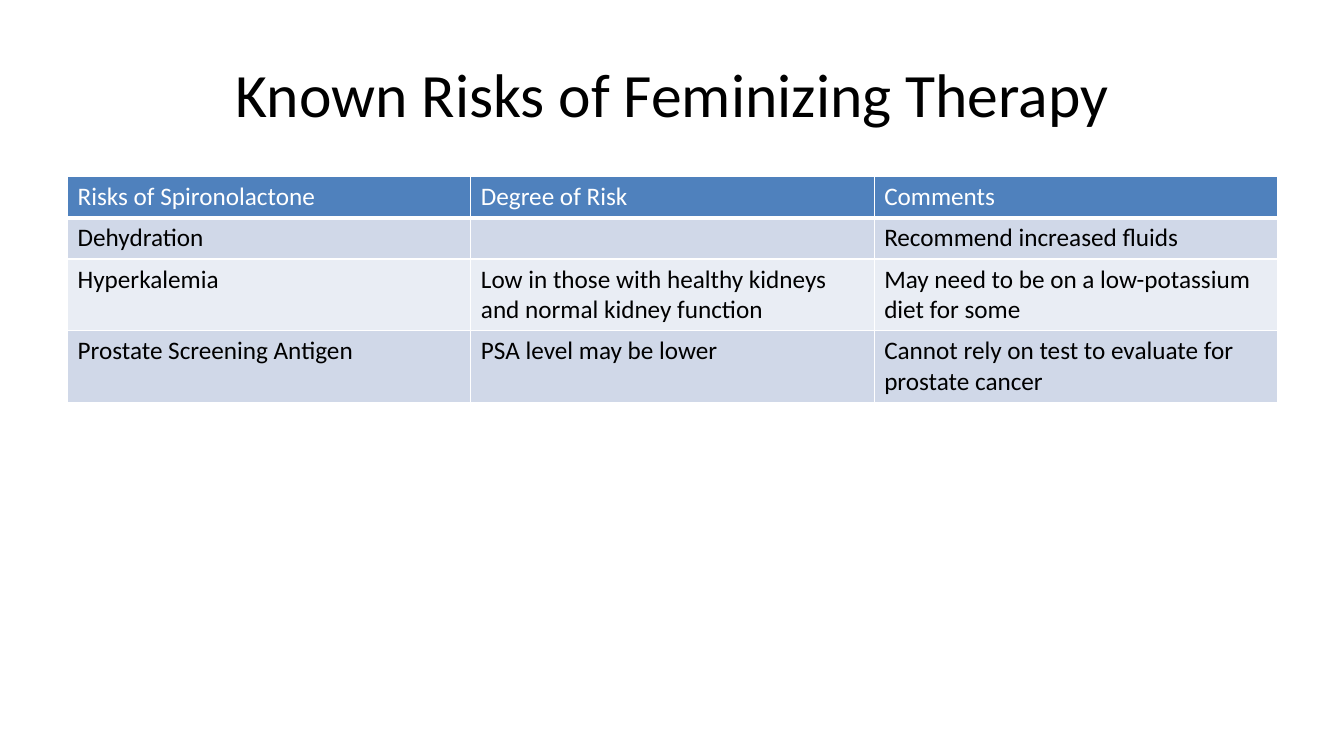
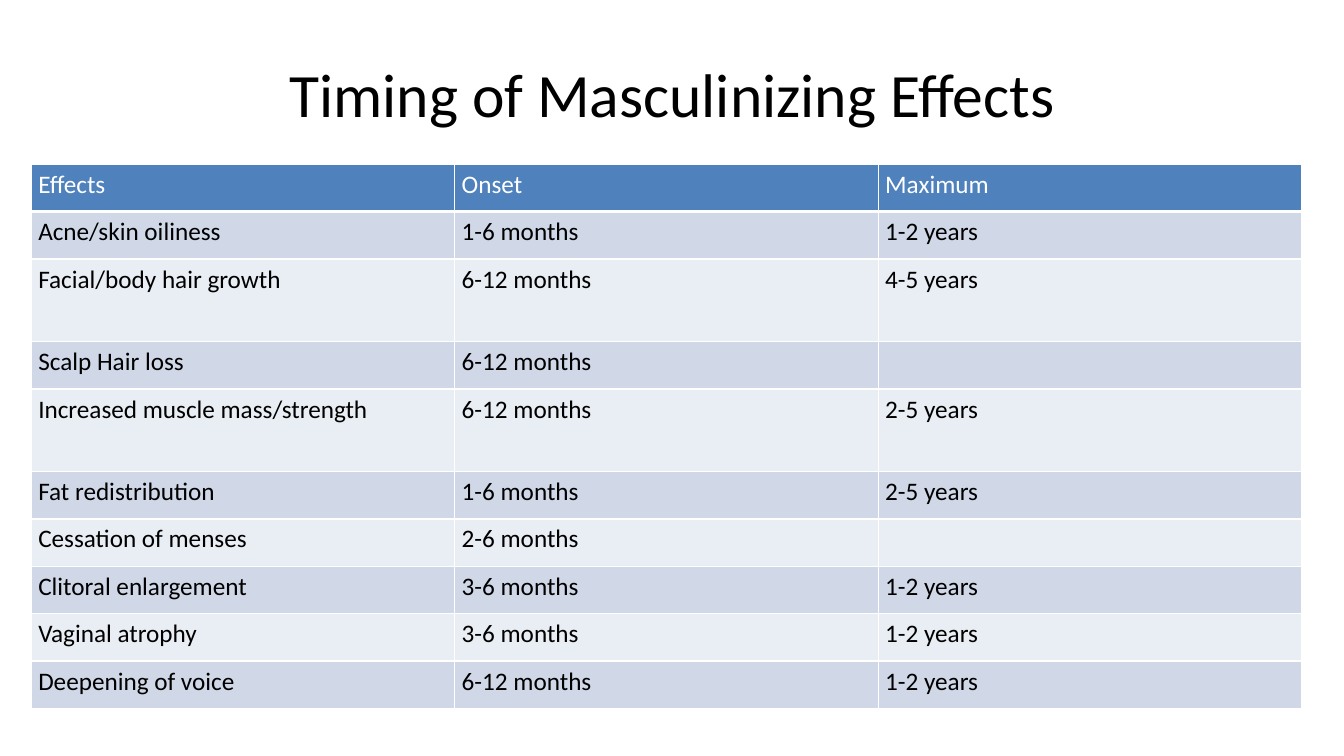
from lxml import etree
from pptx import Presentation
from pptx import util as u
from pptx.dml.color import RGBColor
from pptx.enum import text
from pptx.oxml.ns import qn

PX = 9144  # EMU, 100 px to the inch
SLIDE_SIZE = (1333, 750)
TITLE_BOX = (67, 30, 1200, 125)
FONT = "Calibri"
BLACK, WHITE = "000000", "FFFFFF"
HEADER_FILL = "4F81BD"
BAND_FILLS = ("D0D8E8", "E9EDF4")
SHORT, TALL = 47, 82

SLIDES = [
    {
        "title": "Known Risks of Feminizing Therapy",
        "left": 67, "top": 175, "column_width": 400, "side_margin": 10,
        "row_heights": [41, 41, 70, 70],
        "rows": [
            ("Risks of Spironolactone", "Degree of Risk", "Comments"),
            ("Dehydration", "", "Recommend increased fluids"),
            ("Hyperkalemia",
             "Low in those with healthy kidneys and normal kidney function",
             "May need to be on a low-potassium diet for some"),
            ("Prostate Screening Antigen", "PSA level may be lower",
             "Cannot rely on test to evaluate for prostate cancer"),
        ],
    },
    {
        "title": "Timing of Masculinizing Effects",
        "left": 31, "top": 163, "column_width": 420, "side_margin": 7,
        "row_heights": [SHORT, SHORT, TALL, SHORT, TALL] + [SHORT] * 5,
        "rows": [
            ("Effects", "Onset", "Maximum"),
            ("Acne/skin oiliness", "1-6 months", "1-2 years"),
            ("Facial/body hair growth", "6-12 months", "4-5 years"),
            ("Scalp Hair loss", "6-12 months", ""),
            ("Increased muscle mass/strength", "6-12 months", "2-5 years"),
            ("Fat redistribution", "1-6 months", "2-5 years"),
            ("Cessation of menses", "2-6 months", ""),
            ("Clitoral enlargement", "3-6 months", "1-2 years"),
            ("Vaginal atrophy", "3-6 months", "1-2 years"),
            ("Deepening of voice", "6-12 months", "1-2 years"),
        ],
    },
]


def px(length):
    return u.Emu(length * PX)


def color(hex_string):
    return RGBColor.from_string(hex_string)


def write_text(frame, content, size=18, fill=BLACK, align=text.PP_ALIGN.LEFT):
    paragraph = frame.paragraphs[0]
    paragraph.alignment = align
    if content:
        run = paragraph.add_run()
        run.text = content
        run.font.name = FONT
        run.font.size = u.Pt(size)
        run.font.color.rgb = color(fill)


def add_borders(cell, bottom_width):
    """Draw white cell borders; call before the fill, which must follow them."""
    properties = cell._tc.get_or_add_tcPr()
    for side, width in (("L", 1), ("R", 1), ("T", 1), ("B", bottom_width)):
        line = etree.SubElement(properties, qn(f"a:ln{side}"), w=str(u.Pt(width)))
        fill = etree.SubElement(line, qn("a:solidFill"))
        etree.SubElement(fill, qn("a:srgbClr"), val=WHITE)


def add_title(slide, content):
    title = slide.shapes.title
    title.left, title.top, title.width, title.height = map(px, TITLE_BOX)
    title.text_frame.vertical_anchor = text.MSO_ANCHOR.MIDDLE
    write_text(title.text_frame, content, size=44, align=text.PP_ALIGN.CENTER)


def add_banded_table(slide, content):
    rows, heights = content["rows"], content["row_heights"]
    column_count = len(rows[0])
    table = slide.shapes.add_table(
        len(rows), column_count, px(content["left"]), px(content["top"]),
        px(content["column_width"] * column_count), px(sum(heights))).table
    for column in table.columns:
        column.width = px(content["column_width"])
    for row_index, (values, height) in enumerate(zip(rows, heights)):
        is_header = row_index == 0
        band = HEADER_FILL if is_header else BAND_FILLS[(row_index - 1) % 2]
        table.rows[row_index].height = px(height)
        for column_index, value in enumerate(values):
            cell = table.cell(row_index, column_index)
            cell.margin_left = cell.margin_right = px(content["side_margin"])
            cell.margin_top = cell.margin_bottom = px(5)
            add_borders(cell, bottom_width=3 if is_header else 1)
            cell.fill.solid()
            cell.fill.fore_color.rgb = color(band)
            write_text(cell.text_frame, value, fill=WHITE if is_header else BLACK)


def main():
    presentation = Presentation()
    presentation.slide_width, presentation.slide_height = map(px, SLIDE_SIZE)
    title_only = presentation.slide_layouts[5]
    for content in SLIDES:
        slide = presentation.slides.add_slide(title_only)
        add_title(slide, content["title"])
        add_banded_table(slide, content)
    presentation.save("out.pptx")


if __name__ == "__main__":
    main()
